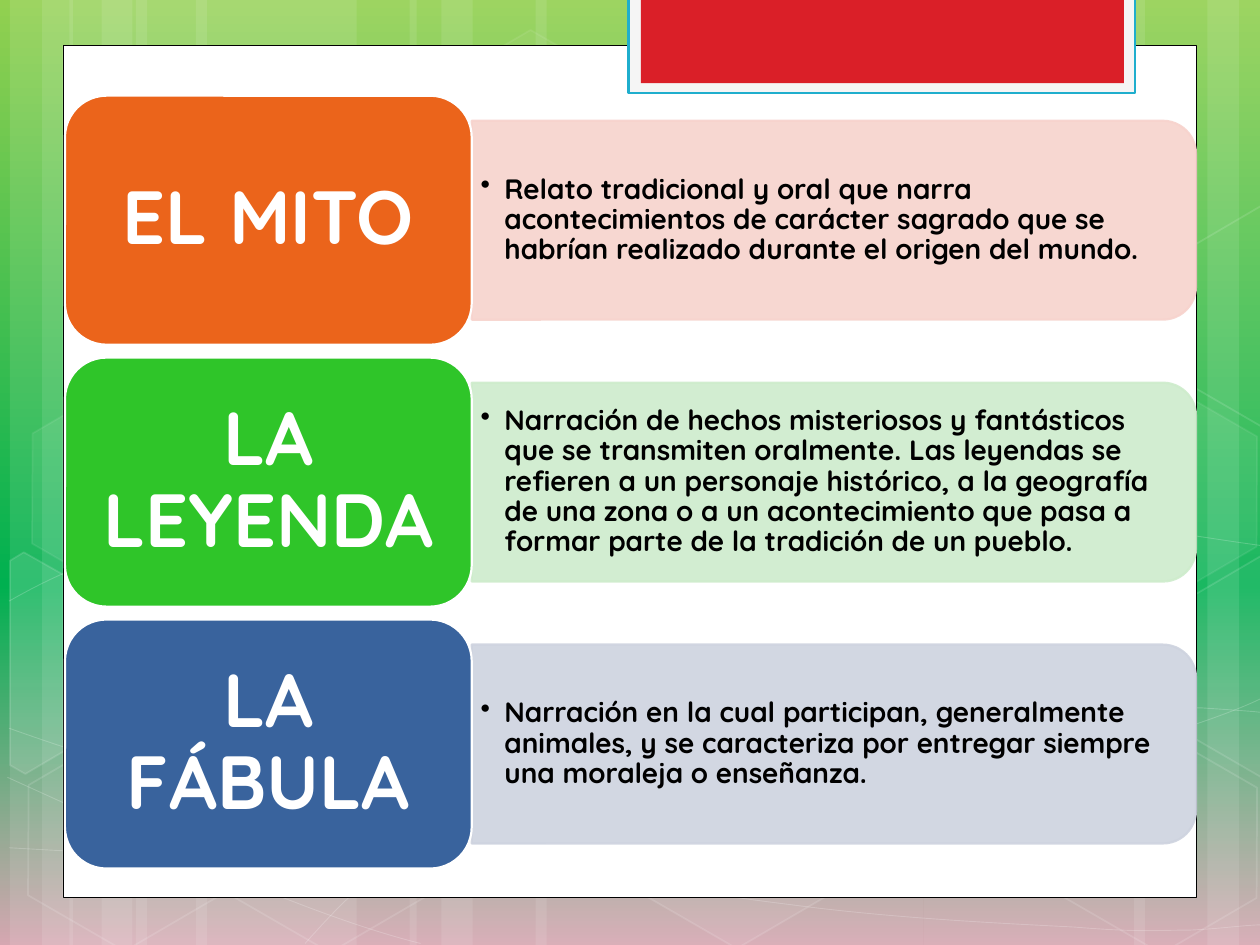
from copy import deepcopy
from math import cos, radians, sin

from lxml import etree
from pptx import Presentation
from pptx.dml.color import RGBColor
from pptx.enum.shapes import MSO_SHAPE
from pptx.enum.text import MSO_ANCHOR, PP_ALIGN
from pptx.oxml.ns import qn
from pptx.util import Cm, Pt

RECT, HEXAGON = MSO_SHAPE.RECTANGLE, MSO_SHAPE.HEXAGON
ROUNDED, ROUND_TOP = MSO_SHAPE.ROUNDED_RECTANGLE, MSO_SHAPE.ROUND_2_SAME_RECTANGLE
MIDDLE, CENTER, LEFT = MSO_ANCHOR.MIDDLE, PP_ALIGN.CENTER, PP_ALIGN.LEFT

FONT = "Quicksand"
WIDTH, HEIGHT = 25.4, 19.05
TILT = 30
COLORS = {
    "lime": "92D050", "green": "00B050", "pink": "D5A7B1",
    "white": "FFFFFF", "black": "000000",
    "tab": "F5F5F5", "tab_edge": "1FAECD", "red": "DA1F28",
    "myth": "EB641B", "myth_pale": "F7D3CD",
    "legend": "2FC529", "legend_pale": "CEECCC",
    "fable": "39639D", "fable_pale": "CED3DF",
}
BACKGROUND_STOPS = [(0, "lime"), (0.62, "green"), (1, "pink")]

# Left edge, width and rotation of each translucent band
BANDS = [
    (2.74, 4.45, 0), (0.2, 1.27, 0), (0.85, 2.12, 0), (3.95, 4.45, 0), (1.4, 1.27, 0),
    (2.05, 2.12, 0), (18.63, 4.45, 180), (24.34, 1.27, 180), (22.86, 2.12, 180),
    (10.8, 7.82, 0), (8.26, 1.27, 0), (8.9, 2.12, 0),
]
# Each curve: a start point, then three Bezier points per segment
CURVES = [
    [(0.18, 17.09), (1.55, 17.17), (2.92, 17.25), (4.83, 17.22), (6.73, 17.2),
     (9.09, 17.15), (11.63, 16.89), (14.17, 16.64), (17.78, 16.15), (20.12, 15.67),
     (22.43, 15.19), (24.82, 14.43), (25.58, 14)],
    [(0.18, 12.12), (0.91, 11.71), (1.65, 11.33), (3.07, 10.95), (4.52, 10.57),
     (6.58, 10.01), (8.81, 9.83), (11.07, 9.65), (13.82, 9.63), (16.61, 9.83),
     (19.41, 10.03), (24.05, 10.82), (25.58, 11.02)],
    [(0.15, 15.67), (3.23, 17.07), (6.27, 18.47), (8.48, 19.02)],
    [(0.18, 14.68), (0.97, 14.96), (1.78, 15.24), (3.25, 15.65), (4.72, 16.03),
     (6.93, 16.66), (9.07, 17.09), (11.18, 17.53), (13.84, 17.98), (15.95, 18.24),
     (18.06, 18.52), (20.32, 18.62), (21.67, 18.69), (22.99, 18.8), (23.34, 18.75),
     (24, 18.75), (24.66, 18.72), (25.12, 18.64), (25.58, 18.64)],
    [(6.15, 19.02), (6.6, 18.52), (7.06, 18.01), (7.67, 17.55), (8.28, 17.09),
     (9.14, 16.59), (9.86, 16.23), (10.57, 15.88), (11, 15.72), (11.94, 15.47),
     (12.85, 15.21), (14.55, 14.86), (15.44, 14.68), (16.36, 14.5), (16.48, 14.5),
     (17.27, 14.45), (18.06, 14.38), (19.3, 14.3), (20.17, 14.27), (21.06, 14.25),
     (22.5, 14.27), (22.5, 14.27), (23.07, 14.27), (23.64, 14.27), (24.21, 14.27),
     (24.66, 14.3), (25.1, 14.33), (25.32, 14.35), (25.55, 14.38), (25.48, 14.35),
     (25.55, 14.38)],
]
# Left, top, fill opacity (None for hollow), line opacity
HEXAGONS = [
    (8.48, 0.91, 4, 8), (12.62, 14.96, 6, 12), (0.28, 15.01, None, 12),
    (0.36, 7.92, 7, 8), (4.42, 15.04, None, 12), (19.13, 11.51, 10, 12),
    (21.18, 15.06, None, 12), (21.18, 7.98, 7, 8),
]
# Hexagons cut off by the slide edge: centre, corners and fill opacity
CUT_HEXAGONS = [
    ((0.91, 13.59), [(0.2, 11.3), (0.48, 11.13), (2.44, 12.24), (2.41, 14.48),
                     (0.51, 15.6), (0.2, 15.42)], 10),
    ((25.02, 13.21), [(23.52, 12.32), (25.43, 11.2), (25.63, 11.33), (25.63, 15.57),
                      (25.45, 15.67), (23.52, 14.55)], 4),
    ((25.02, 6.12), [(23.52, 5.26), (25.43, 4.14), (25.65, 4.27), (25.63, 8.51),
                     (25.45, 8.61), (23.52, 7.49)], None),
]
GENRES = [
    ("EL MITO", "myth",
     "Relato tradicional y oral que narra acontecimientos de carácter sagrado que se "
     "habrían realizado durante el origen del mundo."),
    ("LA LEYENDA", "legend",
     "Narración de hechos misteriosos y fantásticos que se transmiten oralmente. Las "
     "leyendas se refieren a un personaje histórico, a la geografía de una zona o a un "
     "acontecimiento que pasa a formar parte de la tradición de un pueblo."),
    ("LA FÁBULA", "fable",
     "Narración en la cual participan, generalmente animales, y se caracteriza por "
     "entregar siempre una moraleja o enseñanza."),
]


def paint(fill, parent, name, opacity):
    """Apply a solid colour; parent is the XML element that holds the fill."""
    fill.solid()
    fill.fore_color.rgb = RGBColor.from_string(COLORS[name])
    if opacity < 100:
        color = parent.find(qn("a:solidFill")).find(qn("a:srgbClr"))
        etree.SubElement(color, qn("a:alpha"), val=str(opacity * 1000))


def style(shape, fill=None, opacity=100, line=None, weight=1, line_opacity=100):
    shape.shadow.inherit = False
    properties = shape.element.spPr
    if fill and opacity:
        paint(shape.fill, properties, fill, opacity)
    else:
        shape.fill.background()
    if line:
        shape.line.width = Pt(weight)
        paint(shape.line.fill, properties.find(qn("a:ln")), line, line_opacity)
    else:
        shape.line.fill.background()


def add_block(slide, kind, box, **look):
    block = slide.shapes.add_shape(kind, *(Cm(v) for v in box))
    style(block, **look)
    return block


def add_outline(slide, points, close, **look):
    points = [(Cm(x), Cm(y)) for x, y in points]
    builder = slide.shapes.build_freeform(*points[0])
    builder.add_line_segments(points[1:], close=close)
    outline = builder.convert_to_shape()
    style(outline, **look)
    return outline


def bend(outline):
    """Turn every three line segments into one cubic Bezier segment."""
    segments = list(outline.element.iter(qn("a:lnTo")))
    for i in range(0, len(segments), 3):
        curve = etree.Element(qn("a:cubicBezTo"))
        segments[i].addprevious(curve)
        for segment in segments[i:i + 3]:
            curve.append(segment[0])
            segment.getparent().remove(segment)


def turn(point, center, degrees):
    angle = radians(degrees)
    dx, dy = point[0] - center[0], point[1] - center[1]
    return (center[0] + dx * cos(angle) - dy * sin(angle),
            center[1] + dx * sin(angle) + dy * cos(angle))


def add_text(slide, box, text, size, color, align, margins):
    frame = slide.shapes.add_textbox(*(Cm(v) for v in box)).text_frame
    frame.word_wrap = True
    frame.vertical_anchor = MIDDLE
    frame.margin_left = frame.margin_right = Cm(margins[0])
    frame.margin_top = frame.margin_bottom = Cm(margins[1])
    paragraph = frame.paragraphs[0]
    paragraph.alignment = align
    paragraph.line_spacing = 0.9
    run = paragraph.add_run()
    run.text = text
    run.font.name, run.font.size, run.font.bold = FONT, Pt(size), True
    run.font.color.rgb = RGBColor.from_string(COLORS[color])
    return paragraph


def draw_background(slide, height):
    fill = slide.background.fill
    fill.gradient()
    fill.gradient_angle = 270
    stop_list = slide.element.find(".//" + qn("a:gsLst"))
    stop_list.append(deepcopy(stop_list[-1]))
    for stop, (position, color) in zip(fill.gradient_stops, BACKGROUND_STOPS):
        stop.position = position
        stop.color.rgb = RGBColor.from_string(COLORS[color])

    for left, width, rotation in BANDS:
        band = add_block(slide, RECT, (left, 0, width, height), fill="white", opacity=10)
        band.rotation = rotation
    for knots in CURVES:
        bend(add_outline(slide, knots, False, line="white", weight=0.5, line_opacity=20))
    for left, top, opacity, line_opacity in HEXAGONS:
        hexagon = add_block(slide, HEXAGON, (left, top, 4.45, 3.86), fill="white",
                            opacity=opacity, line="white", line_opacity=line_opacity)
        hexagon.adjustments[0] = 0.285
        hexagon.rotation = TILT
    for center, corners, opacity in CUT_HEXAGONS:
        upright = [turn(corner, center, -TILT) for corner in corners]
        cut_hexagon = add_outline(slide, upright, True, fill="white", opacity=opacity,
                                  line="white", line_opacity=12)
        cut_hexagon.rotation = TILT


def draw_panel(slide, left, top, width, height):
    add_block(slide, RECT, (left, top, width, height), fill="white", line="black", weight=0.5)
    # Tab hanging from the top edge of the slide
    add_block(slide, RECT, (left + 11.4, -0.05, 10.21, 1.93), fill="tab", line="tab_edge",
              weight=1.25)
    add_block(slide, RECT, (left + 11.65, -0.05, 9.74, 1.73), fill="red")


def draw_genre(slide, left, top, width, height, title, color, definition):
    title_width, body_height, inset = 8.2, 4.01, 0.24
    body_left, body_width = left + title_width, width - title_width
    middle = top + height / 2

    # Pale body: a quarter turn brings its rounded top to the right
    pale = color + "_pale"
    body = add_block(slide, ROUND_TOP,
                     (body_left + (body_width - body_height) / 2, middle - body_width / 2,
                      body_height, body_width),
                     fill=pale, opacity=90, line=pale, weight=1.25, line_opacity=90)
    body.rotation = 90
    paragraph = add_text(slide, (body_left, middle - 1.81, body_width - 0.2, 3.62),
                         definition, 16, "black", LEFT, (0.18, 0.09))
    paragraph.level = 1
    bullet = paragraph._p.get_or_add_pPr()
    bullet.set("marL", str(Cm(0.48)))
    bullet.set("indent", str(-Cm(0.48)))
    etree.SubElement(bullet, qn("a:buChar"), char="•")

    # Title block
    add_block(slide, ROUNDED, (left, top, title_width, height), fill=color, line="white",
              weight=1.25)
    add_text(slide, (left + inset, top + inset, title_width - 2 * inset, height - 2 * inset),
             title, 43, "white", CENTER, (0.46, 0.23))


def main():
    deck = Presentation()
    deck.slide_width, deck.slide_height = Cm(WIDTH), Cm(HEIGHT)
    slide = deck.slides.add_slide(deck.slide_layouts[6])
    draw_background(slide, HEIGHT)
    draw_panel(slide, 1.27, 0.91, 22.86, 17.19)
    for row, (title, color, definition) in enumerate(GENRES):
        draw_genre(slide, 1.31, 1.93 + row * 5.28, 22.8, 5.02, title, color, definition)
    deck.save("out.pptx")


if __name__ == "__main__":
    main()
